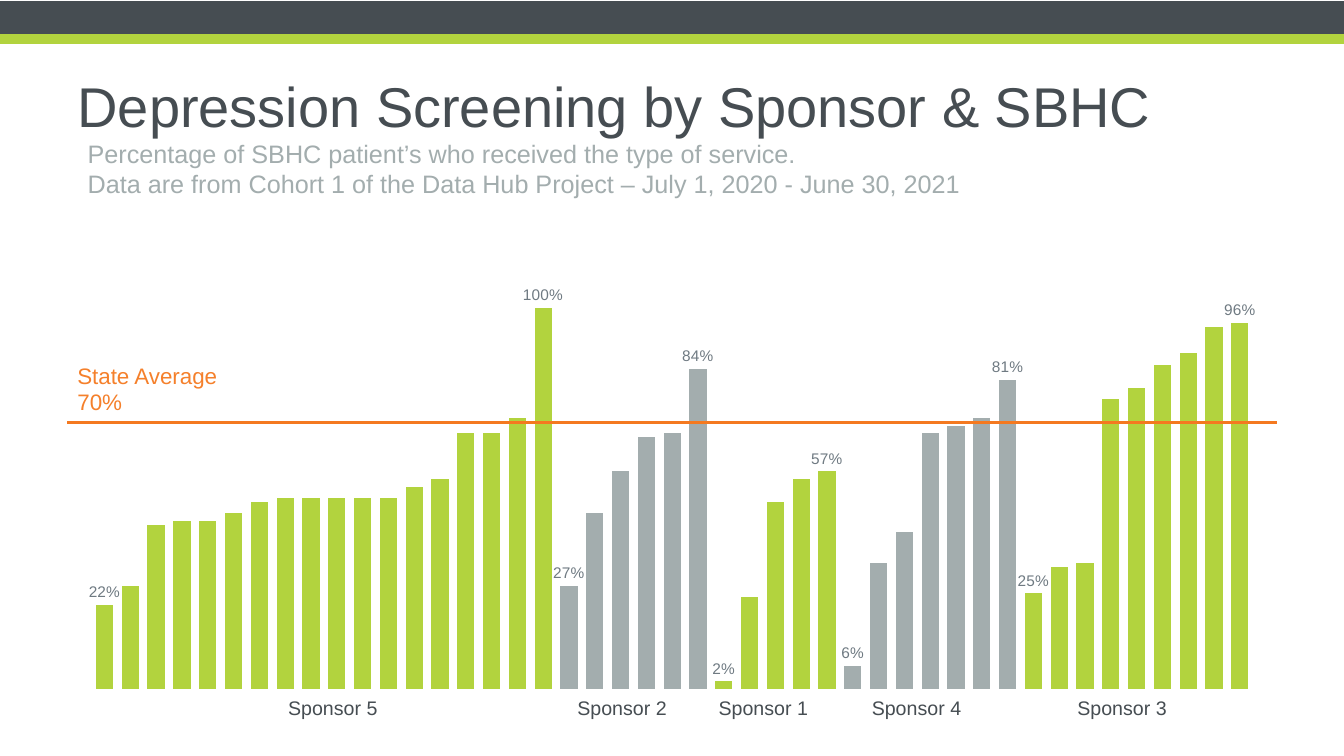
"""Build the depression screening slide with one column per health centre."""
from dataclasses import dataclass

from lxml import etree
from pptx import Presentation
from pptx.chart.data import CategoryChartData
from pptx.dml.color import RGBColor
from pptx.enum import chart as charts, shapes, text
from pptx.oxml.ns import qn
from pptx.util import Cm, Pt

TITLE = "Depression Screening by Sponsor & SBHC"
SUBTITLE = [
    "Percentage of SBHC patient’s who received the type of service.",
    "Data are from Cohort 1 of the Data Hub Project – July 1, 2020 - June 30, 2021",
]
AVERAGE = "State Average 70%"
SPONSORS = [
    ("Sponsor 5", 7.01, [0.22, 0.27, 0.43, 0.44, 0.44, 0.46, 0.49, 0.5, 0.5, 0.5,
                         0.5, 0.5, 0.53, 0.55, 0.67, 0.67, 0.71, 1]),
    ("Sponsor 2", 14.3, [0.27, 0.46, 0.57, 0.66, 0.67, 0.84]),
    ("Sponsor 1", 17.86, [0.02, 0.24, 0.49, 0.55, 0.57]),
    ("Sponsor 4", 21.72, [0.06, 0.33, 0.41, 0.67, 0.69, 0.71, 0.81]),
    ("Sponsor 3", 26.9, [0.25, 0.32, 0.33, 0.76, 0.79, 0.85, 0.88, 0.95, 0.96]),
]


@dataclass(frozen=True)
class Theme:
    """Colours, font and type sizes of the slide."""
    font: str = "Arial"
    dark: str = "464D52"
    green: str = "B2D33E"
    grey: str = "A3ADAE"
    label: str = "6F7A82"
    line: str = "F47920"
    orange: str = "F5802B"
    title_size: int = 40
    subtitle_size: int = 18
    average_size: int = 16
    sponsor_size: int = 14
    label_size: int = 11


THEME = Theme()
BANDS = [(0.03, 0.86, THEME.dark), (0.86, 0.25, THEME.green)]
SLIDE_WIDTH, SLIDE_HEIGHT = 33.87, 19.05
LEFT, WIDTH = 1.7, 30.48
AVERAGE_TOP = 10.64


def style_font(font, size, color):
    """Set the typeface, size and colour of a font."""
    font.name, font.size = THEME.font, Pt(size)
    font.color.rgb = RGBColor.from_string(color)


def paint(fill, color):
    """Give a fill one solid colour."""
    fill.solid()
    fill.fore_color.rgb = RGBColor.from_string(color)


def add_text(parent, box, lines, size, color, wrap=True):
    """Add a text box with one paragraph per line."""
    frame = parent.add_textbox(*map(Cm, box)).text_frame
    frame.word_wrap = wrap
    frame.text = "\n".join(lines)
    for paragraph in frame.paragraphs:
        style_font(paragraph.font, size, color)


def add_bands(slide):
    """Draw the coloured bands along the top edge."""
    for top, height, color in BANDS:
        band = slide.shapes.add_shape(
            shapes.MSO_SHAPE.RECTANGLE, 0, Cm(top), Cm(SLIDE_WIDTH), Cm(height))
        band.shadow.inherit = False
        band.line.fill.background()
        paint(band.fill, color)


def add_title(slide):
    """Place and format the title."""
    title = slide.shapes.title
    title.left, title.top, title.width, title.height = map(Cm, (LEFT, 1.17, WIDTH, 2.97))
    title.text_frame.text = TITLE
    title.text_frame.vertical_anchor = text.MSO_ANCHOR.MIDDLE
    paragraph = title.text_frame.paragraphs[0]
    paragraph.alignment = text.PP_ALIGN.LEFT
    style_font(paragraph.font, THEME.title_size, THEME.dark)


def add_columns(slide):
    """Chart every centre, labelling the first and last of each sponsor."""
    values = [value for sponsor in SPONSORS for value in sponsor[2]]
    data = CategoryChartData(number_format="0%")
    data.categories = [str(number) for number in range(1, len(values) + 1)]
    data.add_series("Series 1", values)
    chart = slide.shapes.add_chart(
        charts.XL_CHART_TYPE.COLUMN_CLUSTERED,
        Cm(LEFT), Cm(5.59), Cm(WIDTH), Cm(12.01), data).chart
    style_font(chart.font, 10, THEME.dark)
    chart.has_legend = chart.has_title = False
    chart.category_axis.visible = chart.value_axis.visible = False
    chart.value_axis.has_major_gridlines = False
    chart.value_axis.minimum_scale, chart.value_axis.maximum_scale = 0, 1.2
    plot = chart.plots[0]
    plot.gap_width, plot.overlap = 50, -27
    plot.vary_by_categories = False
    series = plot.series[0]
    paint(series.format.fill, THEME.green)
    series.data_labels.show_value = False
    start = 0
    for order, (_, _, shares) in enumerate(SPONSORS):
        end = start + len(shares)
        if order % 2:
            for index in range(start, end):
                paint(series.points[index].format.fill, THEME.grey)
        for index in (start, end - 1):
            label = series.points[index].data_label
            label.position = charts.XL_LABEL_POSITION.OUTSIDE_END
            style_font(label.font, THEME.label_size, THEME.label)
        start = end


def add_average(slide):
    """Draw the state average line with its caption."""
    group = slide.shapes.add_group_shape()
    line = group.shapes.add_connector(
        shapes.MSO_CONNECTOR.STRAIGHT,
        Cm(LEFT), Cm(AVERAGE_TOP), Cm(LEFT + WIDTH), Cm(AVERAGE_TOP))
    line.line.width = Pt(2.25)
    line.line.color.rgb = RGBColor.from_string(THEME.line)
    etree.SubElement(line._element.spPr, qn("a:effectLst"))
    add_text(group.shapes, (LEFT, 8.99, 4.62, 1.63), [AVERAGE],
             THEME.average_size, THEME.orange)


def main():
    """Build and save the slide."""
    presentation = Presentation()
    presentation.slide_width, presentation.slide_height = Cm(SLIDE_WIDTH), Cm(SLIDE_HEIGHT)
    slide = presentation.slides.add_slide(presentation.slide_layouts.get_by_name("Title Only"))
    add_bands(slide)
    add_title(slide)
    add_columns(slide)
    for name, left, _ in SPONSORS:
        add_text(slide.shapes, (left, 17.42, 2.77, 0.86), [name],
                 THEME.sponsor_size, THEME.dark, wrap=False)
    add_average(slide)
    add_text(slide.shapes, (1.96, 3.35, 29.18, 1.8), SUBTITLE,
             THEME.subtitle_size, THEME.grey)
    presentation.save("out.pptx")


if __name__ == "__main__":
    main()
